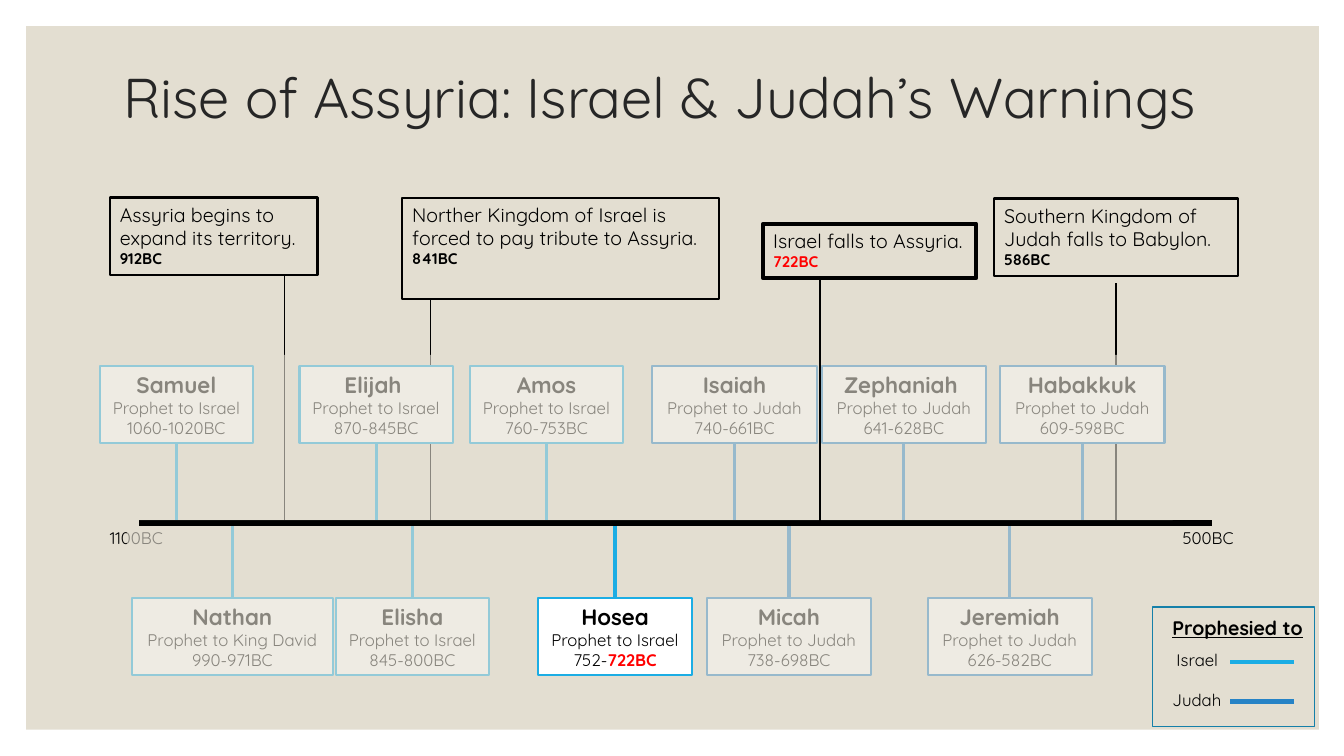
from lxml import etree
from pptx import Presentation
from pptx.dml.color import RGBColor
from pptx.enum.shapes import MSO_CONNECTOR, MSO_SHAPE
from pptx.enum.text import MSO_ANCHOR, MSO_AUTO_SIZE, PP_ALIGN
from pptx.oxml.ns import qn
from pptx.util import Inches, Pt

STRAIGHT = MSO_CONNECTOR.STRAIGHT
RECT = MSO_SHAPE.RECTANGLE
TOP, MIDDLE = MSO_ANCHOR.TOP, MSO_ANCHOR.MIDDLE
FIXED = MSO_AUTO_SIZE.NONE
LEFT, CENTER = PP_ALIGN.LEFT, PP_ALIGN.CENTER

FONT = "Quicksand"
BLACK = RGBColor(0x00, 0x00, 0x00)
WHITE = RGBColor(0xFF, 0xFF, 0xFF)
INK = RGBColor(0x26, 0x26, 0x26)
SAND = RGBColor(0xE3, 0xDE, 0xD1)
RED = RGBColor(0xFF, 0x00, 0x00)
SKY = RGBColor(0x1C, 0xAD, 0xE4)
BLUE = RGBColor(0x26, 0x83, 0xC6)
TEAL = RGBColor(0x15, 0x80, 0xA9)

AXIS = 5.19
UPPER, LOWER, CARD = 3.63, 5.93, 0.77
REALMS = {
    "Israel": (1.52, SKY),
    "King David": (1.99, SKY),
    "Judah": (1.63, BLUE),
}
ABOVE = [
    (0.99, "Samuel", "Israel", "1060-1020BC"),
    (2.97, "Elijah ", "Israel", "870-845BC"),
    (4.66, "Amos", "Israel", "760-753BC"),
    (6.47, "Isaiah", "Judah", "740-661BC"),
    (8.15, "Zephaniah ", "Judah", "641-628BC"),
    (9.92, "Habakkuk", "Judah", "609-598BC"),
]
BELOW = [
    (1.31, "Nathan", "King David", "990-971BC"),
    (3.33, "Elisha", "Israel", "845-800BC"),
    (5.34, "Hosea", "Israel", "752-722BC"),
    (7.01, "Micah", "Judah", "738-698BC"),
    (9.2, "Jeremiah", "Judah", "626-582BC"),
]
NOTES = [
    ((1.09, 1.96, 2.06, 0.77), 1.5,
     [[("Assyria begins to expand its territory.", 14)], [("912BC", 11, True)]]),
    ((3.99, 1.96, 3.14, 1.01), 1.5,
     [[("Norther Kingdom of Israel is forced to pay tribute to Assyria.", 14)],
      [("841BC", 11, True)]]),
    ((7.57, 2.22, 2.11, 0.54), 3,
     [[("Israel falls to Assyria. ", 14), ("722BC", 11, True, RED)]]),
    ((9.86, 1.97, 2.42, 0.77), 1.5,
     [[("Southern Kingdom of Judah falls to Babylon. ", 14),
       ("586BC", 11, True)]]),
]
STEMS = [(11.07, 2.81), (4.27, 2.96), (2.82, 2.73)]
VEILS = [(0.85, 3.52, 10.78, 1.64), (1.26, 5.22, 3.97, 1.64),
         (6.91, 5.22, 4.15, 1.64)]


def add_run(para, text, size, bold=False, color=BLACK):
    """Add one formatted run to a paragraph."""
    run = para.add_run()
    run.text = text
    font = run.font
    font.name, font.size, font.bold = FONT, Pt(size), bold
    font.color.rgb = color
    return run


def add_text(slide, box, paras, align=LEFT, wrap=False):
    """Add a text box whose paragraphs are lists of runs."""
    shape = slide.shapes.add_textbox(*map(Inches, box))
    frame = shape.text_frame
    frame.word_wrap, frame.auto_size = wrap, FIXED
    frame.vertical_anchor = TOP
    for i, runs in enumerate(paras):
        para = frame.add_paragraph() if i else frame.paragraphs[0]
        para.alignment = align
        for run in runs:
            add_run(para, *run)
    return shape


def add_line(slide, start, end, color, width):
    """Add a straight line without shadow."""
    line = slide.shapes.add_connector(STRAIGHT, *map(Inches, start + end))
    line.line.color.rgb, line.line.width = color, Pt(width)
    etree.SubElement(line._element.spPr, qn("a:effectLst"))
    return line


def add_rect(slide, box, fill=None, edge=None, alpha=None):
    """Add a plain rectangle with optional fill, edge and opacity."""
    shape = slide.shapes.add_shape(RECT, *map(Inches, box))
    shape.shadow.inherit = False
    if fill is None:
        shape.fill.background()
    else:
        shape.fill.solid()
        shape.fill.fore_color.rgb = fill
    if edge is None:
        shape.line.fill.background()
    else:
        shape.line.color.rgb, shape.line.width = edge, Pt(1)
    if alpha:
        tone = shape._element.spPr.find(qn("a:solidFill"))[0]
        etree.SubElement(tone, qn("a:alpha"), val=str(alpha * 1000))
    return shape


def add_title(slide, box):
    """Place the title over the sand panel."""
    panel = add_rect(slide, (0.26, 0.26, 12.82, 6.98), SAND)
    slide.shapes._spTree.insert(2, panel._element)
    title = slide.shapes.title
    title.left, title.top, title.width, title.height = map(Inches, box)
    frame = title.text_frame
    frame.word_wrap, frame.auto_size = True, FIXED
    frame.vertical_anchor = MIDDLE
    para = frame.paragraphs[0]
    para.alignment, para.line_spacing = LEFT, 0.9
    add_run(para, "Rise of Assyria: Israel & Judah’s Warnings", 40, color=INK)


def add_note(slide, box, width, paras):
    """Add a framed event note."""
    note = add_text(slide, box, paras, wrap=True)
    note.line.color.rgb, note.line.width = BLACK, Pt(width)


def add_seer(slide, left, top, name, realm, years):
    """Add a prophet card and its stem to the time axis."""
    wide, color = REALMS[realm]
    dates = [(years, 12)]
    if name == "Hosea":
        dates = [("752-", 12), ("722BC", 12, True, RED)]
    paras = [[(name, 16, True)], [("Prophet to " + realm, 12)], dates]
    card = add_text(slide, (left, top, wide, CARD), paras, CENTER)
    card.fill.solid()
    card.fill.fore_color.rgb = WHITE
    card.line.color.rgb, card.line.width = color, Pt(1.5)
    mid = left + wide / 2
    stem = add_line(slide, (mid, top), (mid, AXIS), color, 2.25)
    stem.begin_connect(card, 2 if top < AXIS else 0)


def add_axis(slide, left, right):
    """Add the time axis with its end labels."""
    add_line(slide, (left, AXIS), (right, AXIS), BLACK, 4.5)
    add_text(slide, (left - 0.39, AXIS, 0.81, 0.3), [[("1100BC", 12)]])
    add_text(slide, (right - 0.39, AXIS, 0.71, 0.3), [[("500BC", 12)]])


def add_key(slide, left, top, wide, high):
    """Add the legend for the two kingdoms."""
    add_rect(slide, (left, top, wide, high), edge=TEAL)
    head = add_text(slide, (left + 0.1, top + 0.04, 1.5, 0.34),
                    [[("Prophesied to", 14, True)]])
    head.text_frame.paragraphs[0].runs[0].font.underline = True
    rows = [("Israel", SKY, 0.14, 0.61), ("Judah", BLUE, 0.1, 0.72)]
    for i, (realm, color, inset, span) in enumerate(rows):
        y = top + 0.55 + 0.39 * i
        add_text(slide, (left + inset, y - 0.17, span, 0.3), [[(realm, 12)]])
        add_line(slide, (left + 0.77, y), (left + 1.4, y), color, 3)


def main():
    """Build and save the slide."""
    deck = Presentation()
    deck.slide_width, deck.slide_height = Inches(13.33), Inches(7.5)
    slide = deck.slides.add_slide(deck.slide_layouts[5])
    add_title(slide, (1.12, 0.19, 11.09, 1.62))
    for x, y in STEMS:
        add_line(slide, (x, AXIS), (x, y), BLACK, 1)
    for top, seers in ((UPPER, ABOVE), (LOWER, BELOW)):
        for left, *facts in seers:
            add_seer(slide, left, top, *facts)
    for note in NOTES:
        add_note(slide, *note)
    add_axis(slide, 1.38, 12.02)
    add_key(slide, 11.43, 6.02, 1.61, 1.19)
    for box in VEILS:
        add_rect(slide, box, SAND, alpha=60)
    add_line(slide, (8.13, AXIS), (8.13, 2.76), BLACK, 1.5)
    deck.save("out.pptx")


if __name__ == "__main__":
    main()
